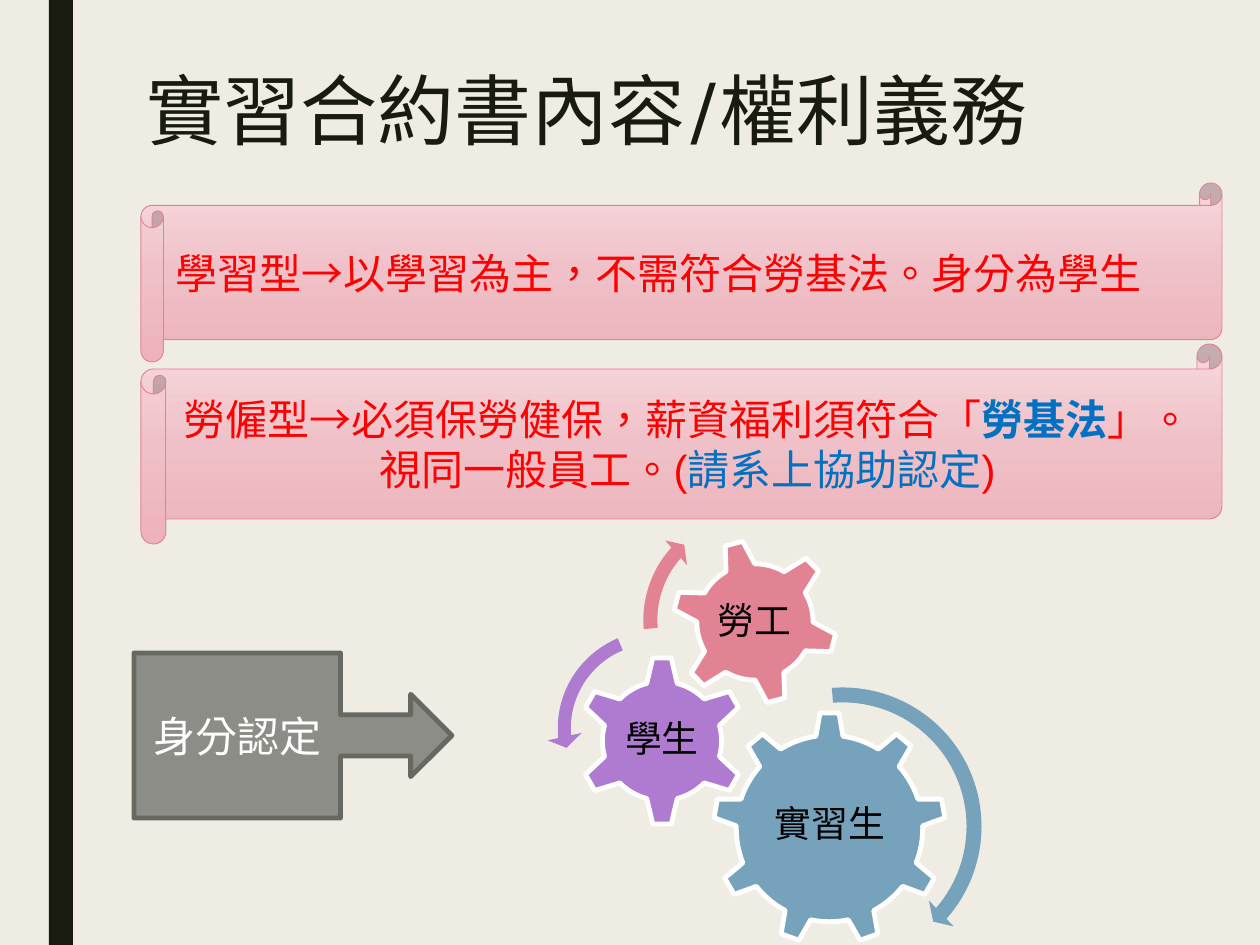
from copy import deepcopy
from dataclasses import dataclass

from pptx import Presentation
from pptx.dml.color import RGBColor
from pptx.enum.lang import MSO_LANGUAGE_ID as Language
from pptx.enum.shapes import MSO_SHAPE as Shape
from pptx.enum.text import MSO_ANCHOR as Anchor, MSO_AUTO_SIZE as AutoSize, PP_ALIGN as Align
from pptx.oxml.ns import qn
from pptx.util import Pt

PX = 914400 / 126


@dataclass(frozen=True)
class Theme:
    paper: str = "EFEDE3"
    ink: str = "191B0E"
    white: str = "FFFFFF"
    black: str = "000000"
    red: str = "FF0000"
    blue: str = "0070C0"
    pink: str = "E28394"
    purple: str = "AE7BD0"
    steel: str = "77A2BB"
    gray: str = "8C8D86"
    gray_edge: str = "686863"
    scroll_stops: tuple = ((0, "F6D9DD"), (0.5, "EFC0C7"), (1, "EEB2BB"))
    title_size: int = 44
    body_size: int = 24
    gear_size: int = 21
    hairline: float = 0.5
    outline: float = 2.75
    main_font: str = "Karla"
    scroll_font: str = "Arial"


THEME = Theme()


def px(*lengths):
    return [round(length * PX) for length in lengths]


def rgb(code):
    return RGBColor.from_string(code)


def format_run(run, size, color, font=THEME.main_font, bold=False):
    run.font.size = Pt(size)
    run.font.name = font
    run.font.bold = bold
    run.font.color.rgb = rgb(color)
    run.font.language_id = Language.TRADITIONAL_CHINESE


def write_line(frame, text, size, color, align=Align.CENTER):
    para = frame.paragraphs[0]
    para.text = text
    para.alignment = align
    format_run(para.runs[0], size, color)
    return para


def add_block(shapes, kind, box, fill=None, line=None, width=THEME.outline):
    block = shapes.add_shape(kind, *px(*box))
    block.shadow.inherit = False
    if fill:
        block.fill.solid()
        block.fill.fore_color.rgb = rgb(fill)
    if line:
        block.line.color.rgb = rgb(line)
        block.line.width = Pt(width)
    else:
        block.line.fill.background()
    return block


def add_title(page, text):
    title = page.shapes.title
    title.left, title.top, title.width, title.height = px(134, 67, 993, 204)
    frame = title.text_frame
    frame.auto_size = AutoSize.NONE
    frame.vertical_anchor = Anchor.TOP
    para = write_line(frame, text, THEME.title_size, THEME.ink, Align.LEFT)
    para.line_spacing = 0.89


def shade_scroll(scroll):
    scroll.fill.gradient()
    scroll.fill.gradient_angle = 270
    stop_list = scroll._element.spPr.find(qn("a:gradFill")).find(qn("a:gsLst"))
    stop_list.append(deepcopy(stop_list[0]))
    for stop, (position, color) in zip(scroll.fill.gradient_stops, THEME.scroll_stops):
        stop.position = position
        stop.color.rgb = rgb(color)


def add_scroll(page, top, height, pieces, align):
    scroll = add_block(page.shapes, Shape.HORIZONTAL_SCROLL, (141, top, 1081, height),
                       line=THEME.pink, width=THEME.hairline)
    shade_scroll(scroll)
    frame = scroll.text_frame
    frame.word_wrap = True
    frame.vertical_anchor = Anchor.MIDDLE
    para = frame.paragraphs[0]
    para.alignment = align
    for text, color, bold in pieces:
        run = para.add_run()
        run.text = text
        format_run(run, THEME.body_size, color, THEME.scroll_font, bold)


def add_gear(group, kind, left, top, side, color, rotation=0):
    gear = add_block(group.shapes, kind, (left, top, side, side), color, THEME.white)
    gear.rotation = rotation


def add_gear_label(group, text, box):
    label = group.shapes.add_textbox(*px(*box))
    frame = label.text_frame
    frame.word_wrap = True
    frame.vertical_anchor = Anchor.MIDDLE
    frame.margin_left = frame.margin_right = frame.margin_top = frame.margin_bottom = px(4)[0]
    para = write_line(frame, text, THEME.gear_size, THEME.black)
    para.line_spacing = 0.9


def add_turn_arrow(group, kind, left, top, side, color, adjustments):
    arrow = add_block(group.shapes, kind, (left, top, side, side), color)
    for index, value in enumerate(adjustments):
        arrow.adjustments[index] = value


def add_gears(page):
    group = page.shapes.add_group_shape()
    add_gear(group, Shape.GEAR_9, 713, 712, 233, THEME.steel)
    add_gear_label(group, "實習生", (760, 766, 140, 120))
    add_gear(group, Shape.GEAR_6, 577, 656, 170, THEME.purple)
    add_gear_label(group, "學生", (620, 699, 84, 84))
    add_gear(group, Shape.GEAR_6, 672, 539, 166, THEME.pink, 345)
    add_gear_label(group, "勞工", (708, 576, 93, 93))
    add_turn_arrow(group, Shape.CIRCULAR_ARROW, 693, 677, 299, THEME.steel,
                   (0.05, 2.99, 24.82, 159.37, 0.06))
    add_turn_arrow(group, Shape.LEFT_CIRCULAR_ARROW, 547, 620, 217, THEME.purple,
                   (0.06, 4.3, 104.89, 148.38, 0.08))
    add_turn_arrow(group, Shape.CIRCULAR_ARROW, 634, 503, 234, THEME.pink,
                   (0.06, 3.94, 133.14, 105.08, 0.07))


def add_callout(page, text):
    callout = add_block(page.shapes, Shape.RIGHT_ARROW_CALLOUT, (134, 653, 318, 165),
                        THEME.gray, THEME.gray_edge)
    frame = callout.text_frame
    frame.word_wrap = True
    frame.vertical_anchor = Anchor.MIDDLE
    write_line(frame, text, THEME.body_size, THEME.white)


def main():
    deck = Presentation()
    deck.slide_width, deck.slide_height = px(1260, 945)
    page = deck.slides.add_slide(deck.slide_layouts[5])
    page.background.fill.solid()
    page.background.fill.fore_color.rgb = rgb(THEME.paper)

    add_block(page.shapes, Shape.RECTANGLE, (49, 0, 24, 945), THEME.ink)
    add_title(page, "實習合約書內容/權利義務")
    add_scroll(page, 344, 200, [
        ("勞僱型→必須保勞健保，薪資福利須符合「", THEME.red, False),
        ("勞基法", THEME.blue, True),
        ("」。視同一般員工。(", THEME.red, False),
        ("請系上協助認定", THEME.blue, False),
        (")", THEME.red, False),
    ], Align.CENTER)
    add_scroll(page, 183, 179, [
        ("學習型→以學習為主，不需符合勞基法。身分為學生", THEME.red, False),
    ], Align.LEFT)
    add_gears(page)
    add_callout(page, "身分認定")
    deck.save("out.pptx")


if __name__ == "__main__":
    main()
